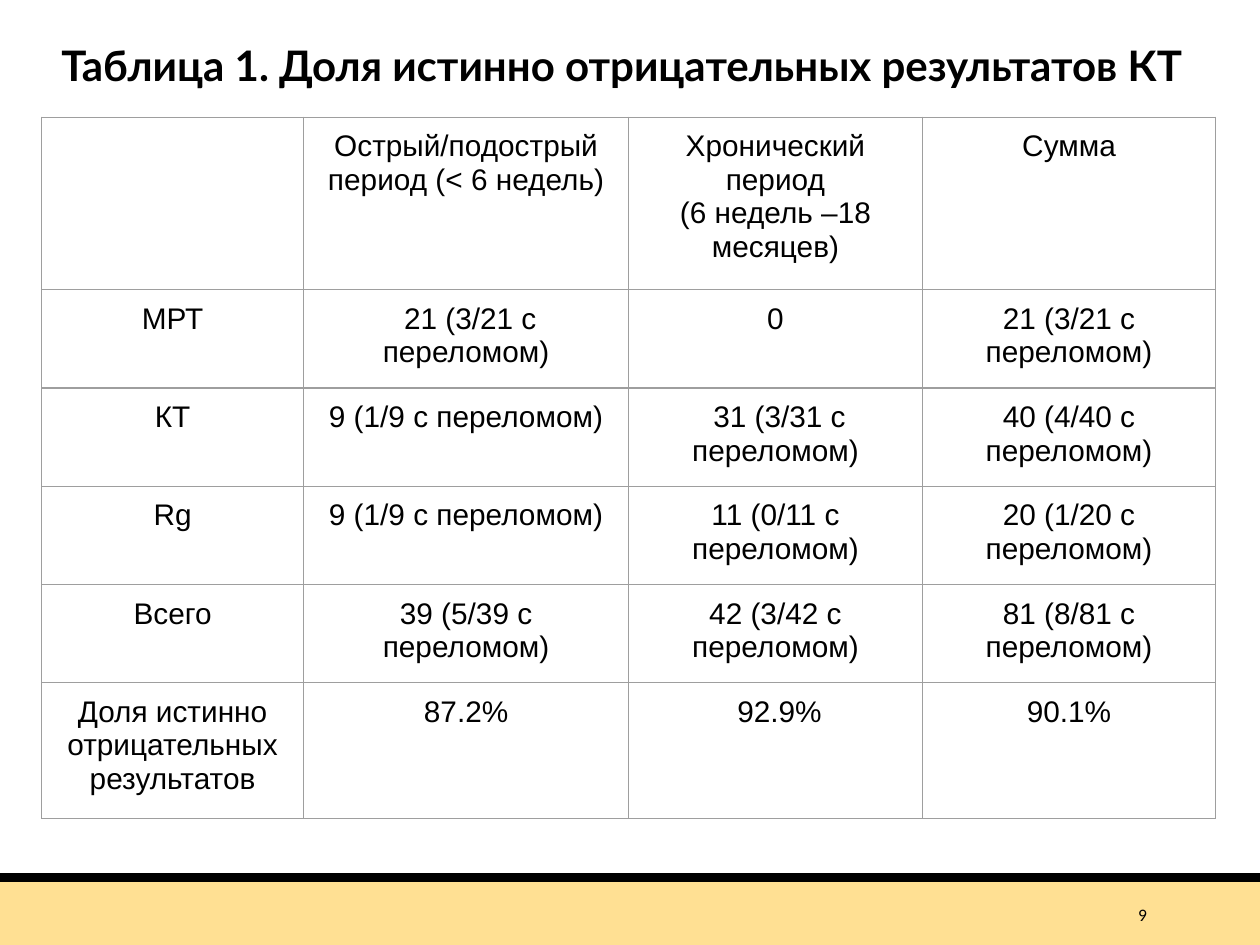
from lxml.etree import SubElement
from pptx import Presentation
from pptx.dml.color import RGBColor
from pptx.enum.shapes import MSO_SHAPE as SHAPE
from pptx.enum.text import MSO_ANCHOR as ANCHOR, PP_ALIGN as ALIGN
from pptx.oxml import parse_xml
from pptx.oxml.ns import nsdecls, qn
from pptx.util import Inches, Pt


def rgb(value):
    return RGBColor.from_string(value)


def add_run(p, text, font, size, align, bold=False):
    p.alignment = align
    r = p.add_run()
    r.text = text
    r.font.name, r.font.size, r.font.bold = font, Pt(size), bold
    r.font.color.rgb = rgb("000000")


prs = Presentation()
prs.slide_width, prs.slide_height = Inches(10), Inches(7.5)
W, H = prs.slide_width, prs.slide_height
s = prs.slides.add_slide(prs.slide_layouts[5])

band_top, rule_h = Inches(7), Inches(0.07)
for top, height, color in [(band_top, H - band_top, "FFE093"),
                           (band_top - rule_h, rule_h, "000000")]:
    sp = s.shapes.add_shape(SHAPE.RECTANGLE, 0, top, W, height)
    sp.shadow.inherit = False
    sp.fill.solid()
    sp.fill.fore_color.rgb = rgb(color)
    sp.line.fill.background()

number = s.shapes.add_textbox(Inches(8.12), Inches(7.06), Inches(1.08), Inches(0.4))
tf = number.text_frame
tf.word_wrap = True
tf.vertical_anchor = ANCHOR.MIDDLE
add_run(tf.paragraphs[0], "9", "Calibri", 10, ALIGN.RIGHT)

title = s.shapes.title
title.left, title.top = Inches(0.17), Inches(0.26)
title.width, title.height = Inches(9.61), Inches(0.51)
tf = title.text_frame
tf.word_wrap = True
tf.vertical_anchor = ANCHOR.TOP
add_run(tf.paragraphs[0], "Таблица 1. Доля истинно отрицательных результатов КТ ",
        "Lato", 24, ALIGN.CENTER, True)

rows = [
    ["", "Острый/подострый период (< 6 недель)",
     "Хронический период\n(6 недель –18 месяцев)", "Сумма"],
    ["МРТ", " 21 (3/21 с переломом)", "0", "21 (3/21 с переломом)"],
    ["КТ", "9 (1/9 с переломом)", " 31 (3/31 с переломом)", "40 (4/40 с переломом)"],
    ["Rg", "9 (1/9 с переломом)", "11 (0/11 с переломом)", "20 (1/20 с переломом)"],
    ["Всего", "39 (5/39 с переломом)", "42 (3/42 с переломом)", "81 (8/81 с переломом)"],
    ["Доля истинно отрицательных результатов", "87.2%", " 92.9%", "90.1%"],
]
col_w = [2.08, 2.58, 2.33, 2.33]
row_h = [1.37] + [0.78] * 4 + [1.08]
table = s.shapes.add_table(len(rows), len(col_w), Inches(0.33), Inches(0.93),
                           Inches(sum(col_w)), Inches(sum(row_h))).table
table.first_row = table.horz_banding = False
for col, width in zip(table.columns, col_w):
    col.width = Inches(width)
for row, height, texts in zip(table.rows, row_h, rows):
    row.height = Inches(height)
    for cell, text in zip(row.cells, texts):
        cell.margin_left = cell.margin_right = Inches(0.1)
        cell.margin_top = cell.margin_bottom = Inches(0.1)
        cell.fill.background()
        tc_pr = cell._tc.get_or_add_tcPr()
        for i, side in enumerate(["lnL", "lnR", "lnT", "lnB"]):
            ln = parse_xml(f'<a:{side} {nsdecls("a")} w="{Pt(0.75)}"/>')
            fill = SubElement(ln, qn("a:solidFill"))
            SubElement(fill, qn("a:srgbClr"), val="9E9E9E")
            tc_pr.insert(i, ln)
        if not text:
            continue
        tf = cell.text_frame
        for i, line in enumerate(text.split("\n")):
            p = tf.add_paragraph() if i else tf.paragraphs[0]
            add_run(p, line, "Arial", 17, ALIGN.CENTER)

prs.save("out.pptx")
